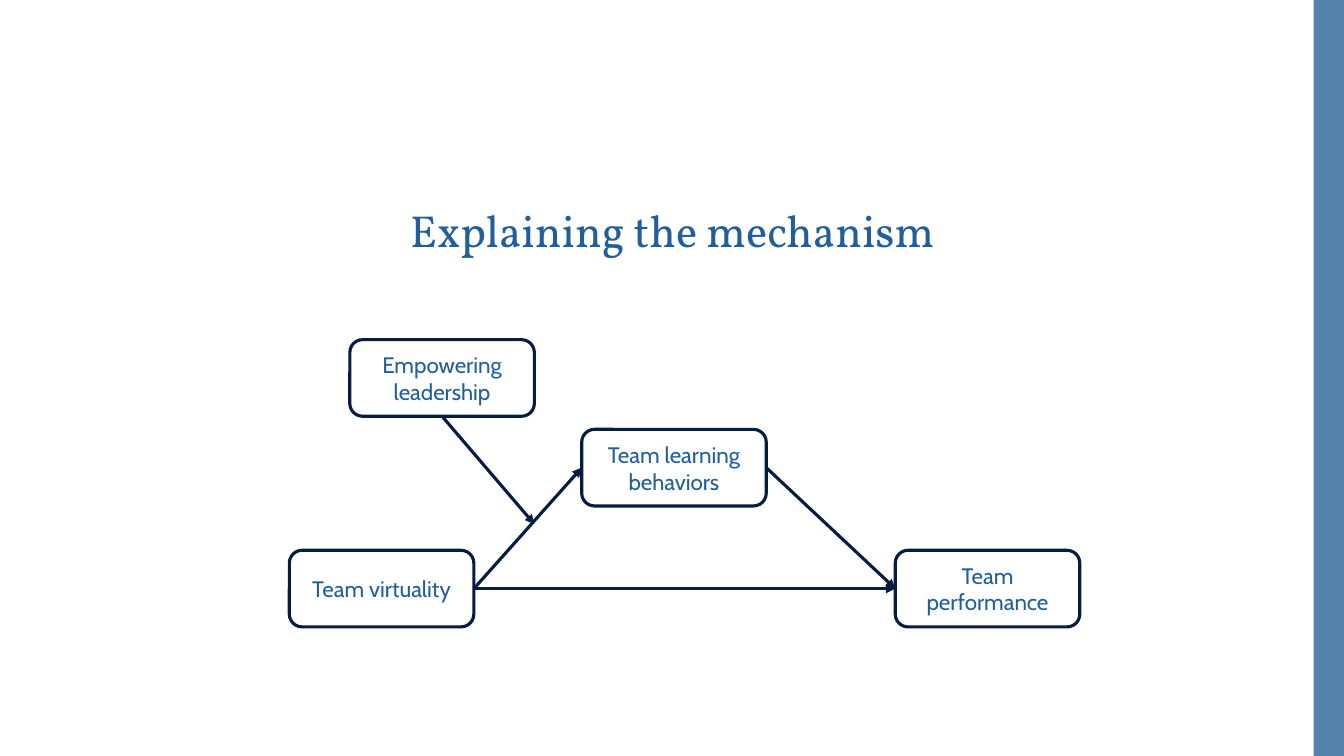
import pptx
import pptx.util
import pptx.dml.color
import pptx.enum.shapes
import pptx.enum.text
import pptx.oxml.ns
import lxml.etree

Inches = pptx.util.Inches
SHAPES = pptx.enum.shapes.MSO_SHAPE
TOP, LEFT, BOTTOM, RIGHT = range(4)
COLORS = {"paper": "FFFFFF", "bar": "5482AB", "outline": "061D41", "text": "215F9A"}
SLIDE_WIDTH, SLIDE_HEIGHT = 13.33, 7.5
NODE_WIDTH, NODE_HEIGHT = 1.83, 0.76
NODES = {
    "Team virtuality": (0, 2.09),
    "Team learning behaviors": (2.9, 0.89),
    "Team performance": (6.01, 2.09),
    "Empowering leadership": (0.6, 0),
}


def color(name):
    return pptx.dml.color.RGBColor.from_string(COLORS[name])


def write(shape, text, font, size, line_spacing=1.0):
    frame = shape.text_frame
    frame.word_wrap = True
    frame.auto_size = pptx.enum.text.MSO_AUTO_SIZE.NONE
    frame.vertical_anchor = pptx.enum.text.MSO_ANCHOR.MIDDLE
    para = frame.paragraphs[0]
    para.alignment = pptx.enum.text.PP_ALIGN.CENTER
    para.line_spacing = line_spacing
    span = para.add_run()
    span.text = text
    span.font.name = font
    span.font.size = pptx.util.Pt(size)
    span.font.color.rgb = color("text")


def add_box(page, kind, left, top, width, height, fill):
    box = page.shapes.add_shape(
        kind, Inches(left), Inches(top), Inches(width), Inches(height))
    box.shadow.inherit = False
    box.fill.solid()
    box.fill.fore_color.rgb = color(fill)
    box.line.fill.background()
    return box


def add_side_bar(page, left, top, width, height):
    add_box(page, SHAPES.RECTANGLE, left, top, width, height, "bar")


def add_title(page, left, top, width, height):
    title = page.shapes.title
    title.left, title.top = Inches(left), Inches(top)
    title.width, title.height = Inches(width), Inches(height)
    write(title, "Explaining the mechanism", "Vollkorn", 32, 0.9)


def style_line(line):
    line.color.rgb = color("outline")
    line.width = pptx.util.Pt(2.25)


def add_node(page, text, left, top):
    node = add_box(page, SHAPES.ROUNDED_RECTANGLE, left, top,
                   NODE_WIDTH, NODE_HEIGHT, "paper")
    style_line(node.line)
    write(node, text, "Cabin", 16)
    return node


def add_arrow(page, source, source_side, target=None, target_side=LEFT, end=(0, 0)):
    arrow = page.shapes.add_connector(
        pptx.enum.shapes.MSO_CONNECTOR.STRAIGHT, 0, 0, Inches(end[0]), Inches(end[1]))
    arrow.begin_connect(source, source_side)
    if target is not None:
        arrow.end_connect(target, target_side)
    style_line(arrow.line)
    qn = pptx.oxml.ns.qn
    lxml.etree.SubElement(arrow.line._get_or_add_ln(), qn("a:tailEnd"), type="triangle")
    lxml.etree.SubElement(arrow._element.spPr, qn("a:effectLst"))


def add_model(page, left, top):
    nodes = {text: add_node(page, text, left + across, top + down)
             for text, (across, down) in NODES.items()}
    virtuality, learning, performance, leadership = nodes.values()
    add_arrow(page, virtuality, RIGHT, learning)
    add_arrow(page, learning, RIGHT, performance)
    add_arrow(page, leadership, BOTTOM, end=(left + 2.43, top + 1.83))
    add_arrow(page, virtuality, RIGHT, performance)


def main():
    deck = pptx.Presentation()
    deck.slide_width = Inches(SLIDE_WIDTH)
    deck.slide_height = Inches(SLIDE_HEIGHT)
    page = deck.slides.add_slide(deck.slide_layouts.get_by_name("Title Only"))
    page.background.fill.solid()
    page.background.fill.fore_color.rgb = color("paper")
    add_side_bar(page, SLIDE_WIDTH - 0.3, 0, 0.3, SLIDE_HEIGHT)
    add_title(page, 2.35, 1.59, 8.64, 1.45)
    add_model(page, 2.87, 3.37)
    deck.save("out.pptx")


if __name__ == "__main__":
    main()
